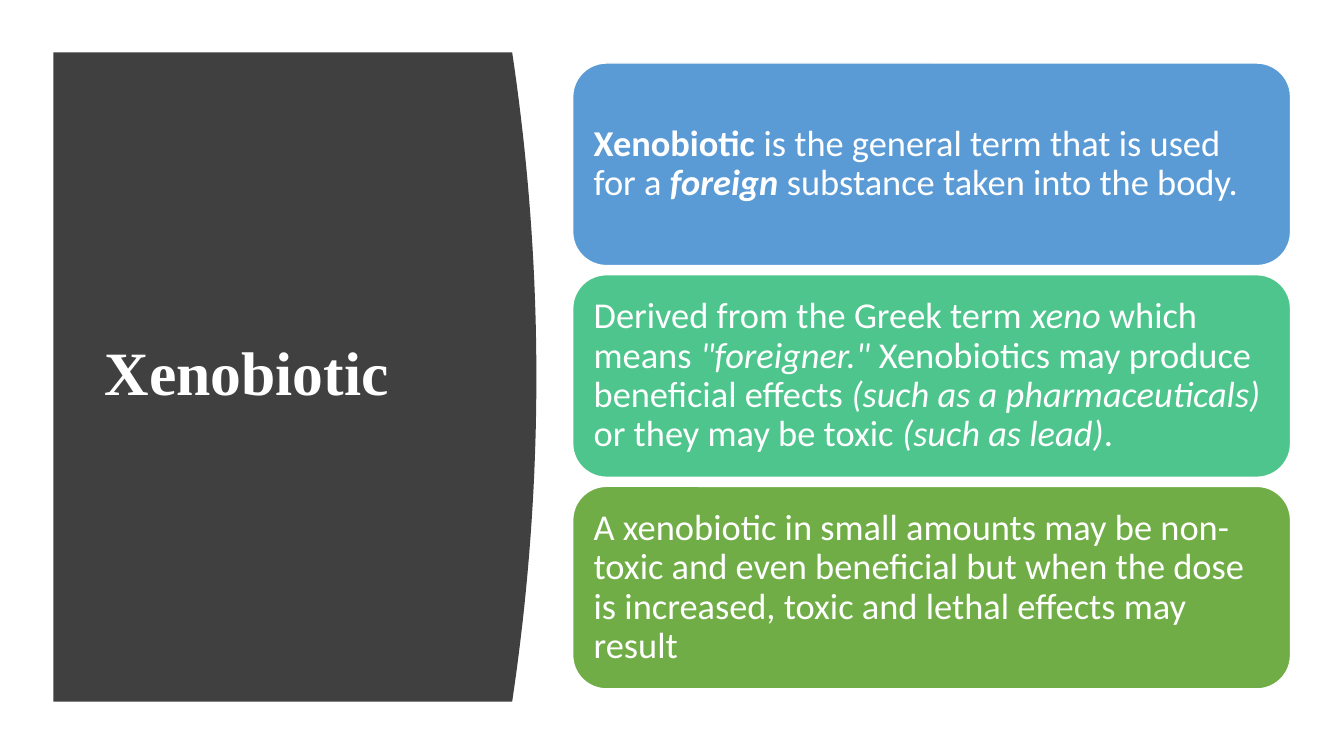
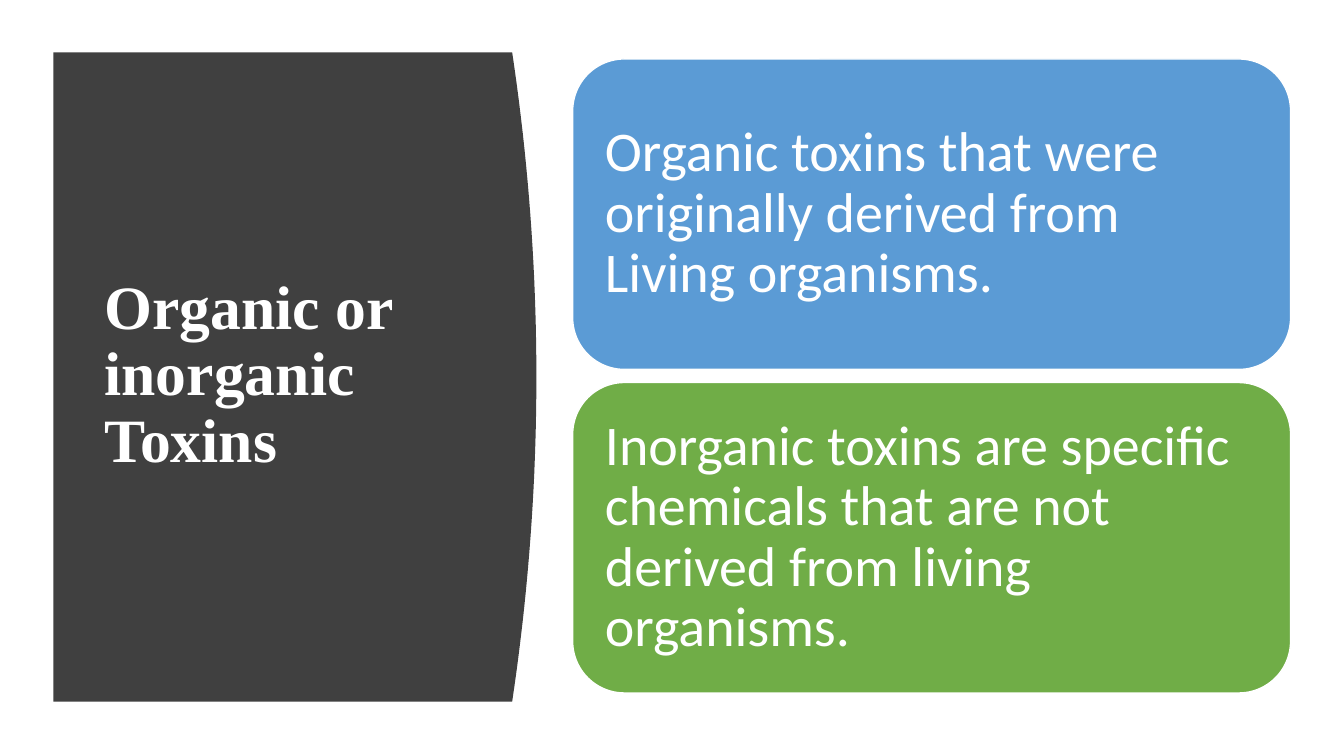
from pptx import Presentation
from pptx.dml.color import RGBColor
from pptx.enum.shapes import MSO_SHAPE
from pptx.enum.text import MSO_ANCHOR, PP_ALIGN
from pptx.util import Inches, Pt

# Shared style
WHITE, DARK = "FFFFFF", "404040"
BLUE, TEAL, GREEN = "5B9BD5", "4DC58D", "70AD47"
TITLE_FONT, BODY_FONT = "Times New Roman", "Calibri"
TITLE_SIZE, LINE_SPACING = 44, 0.9

# Shared geometry, in inches
PANEL_LEFT, PANEL_TOP, PANEL_BOTTOM = 0.53, 0.52, 6.96
PANEL_EDGE, PANEL_BULGE, CURVE_STEPS = 5.08, 0.24, 40
TITLE_BOX = (0.94, 1.11, 3.74, 5.24)
CARD_LEFT, CARD_WIDTH, CARDS_MIDDLE = 5.68, 7.12, 3.73

# Content: each card is (colour, runs), each run is (text, style), b = bold, i = italic
SLIDES = [
    {
        "title": "Xenobiotic",
        "size": 26, "height": 2.01, "gap": 0.09, "inset": 0.11,
        "cards": [
            (BLUE, [("Xenobiotic ", "b"),
                    ("is the general term that is used for a ", ""),
                    ("foreign ", "bi"),
                    ("substance taken into the body.", "")]),
            (TEAL, [("Derived from the Greek term ", ""),
                    ("xeno ", "i"),
                    ("which means ", ""),
                    ('"foreigner." ', "i"),
                    ("Xenobiotics may produce beneficial effects ", ""),
                    ("(such as a pharmaceuticals) ", "i"),
                    ("or they may be toxic ", ""),
                    ("(such as lead)", "i"),
                    (".", "")]),
            (GREEN, [("A xenobiotic in small amounts may be non-toxic and even "
                      "beneficial but when the dose is increased, toxic and "
                      "lethal effects may result", "")]),
        ],
    },
    {
        "title": "Organic or inorganic Toxins",
        "size": 40, "height": 3.08, "gap": 0.13, "inset": 0.17,
        "cards": [
            (BLUE, [("Organic toxins that were originally derived from "
                     "Living organisms.", "")]),
            (GREEN, [("Inorganic toxins are specific chemicals that are not "
                      "derived from living organisms.", "")]),
        ],
    },
]


def rgb(value):
    return RGBColor.from_string(value)


def paint(sp, fill, line=None):
    sp.shadow.inherit = False
    sp.fill.solid()
    sp.fill.fore_color.rgb = rgb(fill)
    if line:
        sp.line.color.rgb = rgb(line)
        sp.line.width = Pt(1)
    else:
        sp.line.fill.background()


def write(sp, runs, font, size, inset_x, inset_y):
    tf = sp.text_frame
    tf.word_wrap = True
    tf.vertical_anchor = MSO_ANCHOR.MIDDLE
    tf.margin_left = tf.margin_right = Inches(inset_x)
    tf.margin_top = tf.margin_bottom = Inches(inset_y)
    p = tf.paragraphs[0]
    p.alignment = PP_ALIGN.LEFT
    p.line_spacing = LINE_SPACING
    for text, style in runs:
        r = p.add_run()
        r.text = text
        r.font.name, r.font.size = font, Pt(size)
        r.font.color.rgb = rgb(WHITE)
        r.font.bold, r.font.italic = "b" in style, "i" in style


def add_panel(s):
    """Dark panel whose right edge bows outward as a parabola."""
    points = []
    for step in range(CURVE_STEPS + 1):
        t = step / CURVE_STEPS
        x = PANEL_EDGE + PANEL_BULGE * 4 * t * (1 - t)
        y = PANEL_TOP + (PANEL_BOTTOM - PANEL_TOP) * t
        points.append((Inches(x), Inches(y)))
    points.append((Inches(PANEL_LEFT), Inches(PANEL_BOTTOM)))
    outline = s.shapes.build_freeform(Inches(PANEL_LEFT), Inches(PANEL_TOP))
    outline.add_line_segments(points, close=True)
    paint(outline.convert_to_shape(), DARK)


def add_title(s, title):
    sp = s.shapes.add_textbox(*map(Inches, TITLE_BOX))
    write(sp, [(title, "b")], TITLE_FONT, TITLE_SIZE, 0.1, 0.05)


def add_cards(s, cards, size, height, gap, inset):
    """Equal cards stacked around a common middle line."""
    pitch = height + gap
    top = CARDS_MIDDLE - (len(cards) * pitch - gap) / 2
    for i, (fill, runs) in enumerate(cards):
        sp = s.shapes.add_shape(
            MSO_SHAPE.ROUNDED_RECTANGLE, Inches(CARD_LEFT),
            Inches(top + i * pitch), Inches(CARD_WIDTH), Inches(height))
        paint(sp, fill, WHITE)
        write(sp, runs, BODY_FONT, size, inset, inset)


def main():
    prs = Presentation()
    prs.slide_width, prs.slide_height = Inches(13.33), Inches(7.5)
    for content in SLIDES:
        s = prs.slides.add_slide(prs.slide_layouts[6])
        add_panel(s)
        add_title(s, content["title"])
        add_cards(s, content["cards"], content["size"], content["height"],
                  content["gap"], content["inset"])
    prs.save("out.pptx")


if __name__ == "__main__":
    main()
